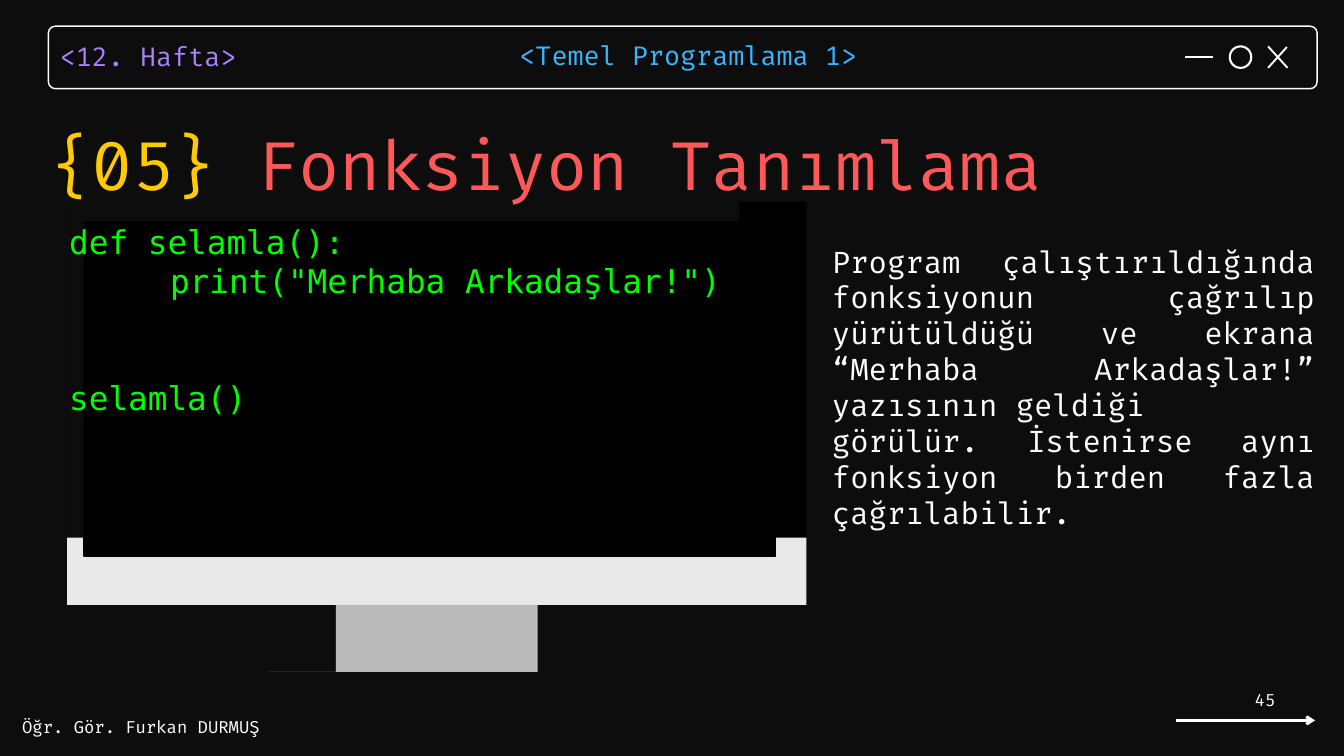
"""Build the function definition slide of a programming course."""
import pptx
import pptx.dml.color
import pptx.enum.shapes
import pptx.enum.text
import pptx.oxml
import pptx.oxml.ns
import pptx.util
from pptx.util import Inches

SHAPE = pptx.enum.shapes.MSO_SHAPE
ALIGN = pptx.enum.text.PP_ALIGN
ANCHOR = pptx.enum.text.MSO_ANCHOR
WHITE = "FFFFFF"
FIRA = "Fira Code"
DRAWING_NS = pptx.oxml.ns.nsdecls("a")


def rgb(value):
    return pptx.dml.color.RGBColor.from_string(value)


def write(shape, box, paragraphs, size, font=FIRA, align=ALIGN.LEFT, anchor=ANCHOR.TOP, spacing=None):
    shape.left, shape.top, shape.width, shape.height = (Inches(v) for v in box)
    frame = shape.text_frame
    frame.word_wrap = True
    frame.auto_size = pptx.enum.text.MSO_AUTO_SIZE.NONE
    frame.vertical_anchor = anchor
    frame.margin_left = frame.margin_right = frame.margin_top = frame.margin_bottom = 0
    for index, runs in enumerate(paragraphs):
        paragraph = frame.paragraphs[0] if index == 0 else frame.add_paragraph()
        paragraph.alignment = align
        paragraph.space_before = pptx.util.Pt(0)
        if spacing:
            paragraph.line_spacing = pptx.util.Pt(spacing)
        for text, color in runs:
            run = paragraph.add_run()
            run.text = text
            run.font.size = pptx.util.Pt(size)
            run.font.name = font
            run.font.color.rgb = rgb(color)
    return frame


deck = pptx.Presentation()
deck.slide_width, deck.slide_height = Inches(20), Inches(11.25)
slide = deck.slides.add_slide(deck.slide_layouts[1])
slide.background.fill.solid()
slide.background.fill.fore_color.rgb = rgb("0D0D0D")
shapes = slide.shapes
title, explanation = slide.placeholders

for preset, box, weight in [
    (SHAPE.ROUNDED_RECTANGLE, (0.72, 0.39, 18.88, 0.93), 1.5),
    (SHAPE.OVAL, (18.3, 0.69, 0.32, 0.32), 2.25),
]:
    outline = shapes.add_shape(preset, *(Inches(v) for v in box))
    outline.shadow.inherit = False
    outline.fill.background()
    outline.line.color.rgb = rgb(WHITE)
    outline.line.width = pptx.util.Pt(weight)
    if preset == SHAPE.ROUNDED_RECTANGLE:
        outline.adjustments[0] = 0.11

for x1, y1, x2, y2, weight in [
    (18.87, 0.69, 19.16, 1.01, 2),
    (19.15, 0.7, 18.87, 1.01, 2),
    (17.64, 0.85, 18.05, 0.85, 2),
    (17.5, 10.72, 19.57, 10.72, 3),
]:
    stroke = shapes.add_connector(
        pptx.enum.shapes.MSO_CONNECTOR.STRAIGHT, Inches(x1), Inches(y1), Inches(x2), Inches(y2))
    stroke.line.color.rgb = rgb(WHITE)
    stroke.line.width = pptx.util.Pt(weight)
    stroke._element.spPr.append(pptx.oxml.parse_xml(f"<a:effectLst {DRAWING_NS}/>"))
next_arrow = stroke
next_arrow.line._get_or_add_ln().append(
    pptx.oxml.parse_xml(f'<a:tailEnd {DRAWING_NS} type="arrow"/>'))

bezel = [
    [(11.41, 3.02), (1.23, 3.02), (0.95, 3.02, 0.72, 3.2, 0.72, 3.43), (0.72, 8.41),
     (11.92, 8.41), (11.92, 3.43), (11.92, 3.2, 11.69, 3.02, 11.41, 3.02)],
    [(11.43, 8.02), (1.19, 8.02), (1.19, 3.44), (11.43, 3.44)],
]
chin = [[(0.72, 8.71), (0.72, 8.86, 0.95, 8.97, 1.23, 8.97), (11.41, 8.97),
         (11.69, 8.97, 11.92, 8.86, 11.92, 8.71), (11.92, 8.44), (0.72, 8.44)]]
stand = [[(5.04, 8.97), (5.04, 8.97, 5.01, 9.4, 4.97, 9.57), (4.9, 9.87, 4.49, 9.78, 4.38, 9.84),
          (4.36, 9.85, 4.37, 9.87, 4.39, 9.87), (8.24, 9.87), (8.26, 9.87, 8.27, 9.85, 8.26, 9.84),
          (8.14, 9.78, 7.73, 9.87, 7.66, 9.57), (7.63, 9.4, 7.59, 8.97, 7.59, 8.97)]]
STEPS = 12
for contours, color in [(bezel, "000000"), (chin, "E9E9E9"), (stand, "BBBBBB")]:
    builder = None
    for contour in contours:
        points = []
        for segment in contour:
            if len(segment) == 2:
                points.append(segment)
                continue
            x0, y0 = points[-1]
            x1, y1, x2, y2, x3, y3 = segment
            for step in range(1, STEPS + 1):
                t = step / STEPS
                a, b, c, d = (1 - t) ** 3, 3 * t * (1 - t) ** 2, 3 * t * t * (1 - t), t ** 3
                points.append((a * x0 + b * x1 + c * x2 + d * x3, a * y0 + b * y1 + c * y2 + d * y3))
        if builder is None:
            builder = shapes.build_freeform(*points[0], scale=Inches(1))
        else:
            builder.move_to(*points[0])
        builder.add_line_segments(points[1:], close=True)
    monitor_part = builder.convert_to_shape()
    monitor_part.shadow.inherit = False
    monitor_part.fill.solid()
    monitor_part.fill.fore_color.rgb = rgb(color)
    monitor_part.line.fill.background()

screen = shapes.add_shape(SHAPE.RECTANGLE, Inches(1.25), Inches(3.3), Inches(10.29), Inches(4.97))
screen.shadow.inherit = False
screen.fill.solid()
screen.fill.fore_color.rgb = rgb("000000")
screen.line.color.rgb = rgb("000000")
screen.line.width = pptx.util.Pt(2)

for box, text, color, size, align, anchor, spacing in [
    ((0.89, 0.52, 3.4, 0.53), "<12. Hafta>", "AB81FF", 28, ALIGN.LEFT, ANCHOR.TOP, 39.2),
    ((7.73, 0.51, 5.29, 0.53), "<Temel Programlama 1>", "38B6FF", 28, ALIGN.LEFT, ANCHOR.TOP, 39.2),
    ((0.33, 10.67, 3.67, 0.3), "Öğr. Gör. Furkan DURMUŞ", WHITE, 18, ALIGN.LEFT, ANCHOR.TOP, None),
    ((16.75, 10.21, 2.23, 0.4), "45", WHITE, 18, ALIGN.RIGHT, ANCHOR.MIDDLE, None),
]:
    write(shapes.add_textbox(0, 0, 0, 0), box, [[(text, color)]], size,
          align=align, anchor=anchor, spacing=spacing)

code_lines = ["def selamla():", "\t\t\tprint(\"Merhaba Arkadaşlar!\")", "selamla()"]
code = write(shapes.add_textbox(0, 0, 0, 0), (1.03, 3.3, 10.58, 2.95),
             [[(line, "00FF00")] for line in code_lines], 35, font="DejaVu Sans Mono")
code.paragraphs[-1].space_before = pptx.util.Pt(83)

explanation_lines = [
    "Program çalıştırıldığında fonksiyonun çağrılıp yürütüldüğü ve ekrana "
    "“Merhaba Arkadaşlar!” yazısının geldiği",
    "görülür. İstenirse aynı fonksiyon birden fazla çağrılabilir.",
]
explanation_text = write(explanation, (12.38, 3.62, 7.19, 4.31),
                         [[(line, WHITE)] for line in explanation_lines], 32, align=ALIGN.JUSTIFY)
for paragraph in explanation_text.paragraphs:
    properties = paragraph._p.get_or_add_pPr()
    properties.set("marL", "0")
    properties.set("indent", "0")
    properties.append(pptx.oxml.parse_xml(f"<a:buNone {DRAWING_NS}/>"))

write(title, (0.75, 1.61, 19.25, 1.38),
      [[("{05} ", "FFCA04"), ("Fonksiyon Tanımlama", "FF5858")]], 72, spacing=102.6)
shapes._spTree.append(title._element)

deck.save("out.pptx")
